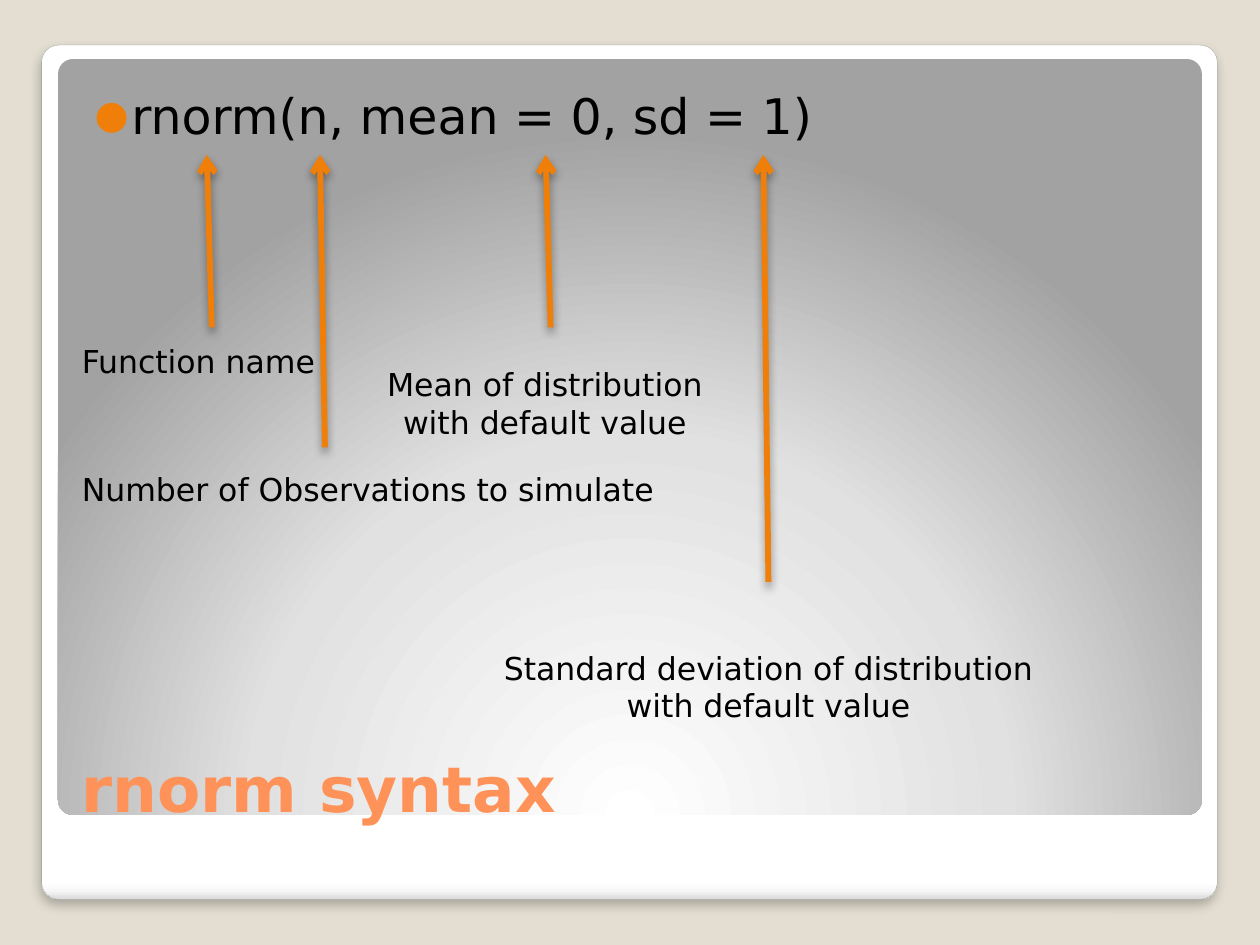
import pptx
import pptx.dml.color
import pptx.enum.shapes
import pptx.enum.text
import pptx.oxml
import pptx.oxml.ns
import pptx.util
from lxml import etree

Cm = pptx.util.Cm
Pt = pptx.util.Pt
ALIGN = pptx.enum.text.PP_ALIGN
ANCHOR = pptx.enum.text.MSO_ANCHOR
FONT = "DejaVu Sans"
ORANGE = "F07F09"
BLACK = "000000"


def rgb(color):
    return pptx.dml.color.RGBColor.from_string(color)


def add_xml(parent, xml):
    ns = pptx.oxml.ns.nsdecls("a")
    root = etree.fromstring(f"<r {ns}>{xml}</r>")
    for child in root:
        parent.append(pptx.oxml.parse_xml(etree.tostring(child)))


def add_shadow(sp, alpha, blur, dist):
    add_xml(
        sp._element.spPr,
        f'<a:effectLst><a:outerShdw blurRad="{Pt(blur)}" dist="{Pt(dist)}" '
        f'dir="5400000" algn="t" rotWithShape="0"><a:srgbClr val="{BLACK}">'
        f'<a:alpha val="{alpha * 1000}"/></a:srgbClr></a:outerShdw></a:effectLst>',
    )


def add_panel(s, box, stops, direction):
    kind = pptx.enum.shapes.MSO_SHAPE.ROUNDED_RECTANGLE
    sp = s.shapes.add_shape(kind, *map(Cm, box))
    sp.adjustments[0] = 0.02
    gs = "".join(
        f'<a:gs pos="{pos * 1000}"><a:srgbClr val="{color}"/></a:gs>'
        for pos, color in stops
    )
    add_xml(
        sp._element.spPr,
        f'<a:gradFill rotWithShape="1"><a:gsLst>{gs}</a:gsLst>{direction}</a:gradFill>',
    )
    sp.line.fill.background()
    return sp


def add_text(s, box, lines, size, color=BLACK, bold=False, align=ALIGN.LEFT,
             wrap=False, anchor=ANCHOR.TOP):
    sp = s.shapes.add_textbox(*map(Cm, box))
    tf = sp.text_frame
    tf.word_wrap = wrap
    tf.vertical_anchor = anchor
    tf.text = lines
    for p in tf.paragraphs:
        p.alignment = align
        for r in p.runs:
            r.font.name = FONT
            r.font.size = Pt(size)
            r.font.bold = bold
            r.font.color.rgb = rgb(color)
    return tf


def add_bullet(p):
    p.space_before = Pt(2.5)
    pPr = p._p.get_or_add_pPr()
    pPr.set("marL", str(Cm(0.74)))
    pPr.set("indent", str(-Cm(0.74)))
    add_xml(
        pPr,
        f'<a:buClr><a:srgbClr val="{ORANGE}"/></a:buClr><a:buSzPct val="80000"/>'
        f'<a:buFont typeface="{FONT}"/><a:buChar char="●"/>',
    )


def add_arrow(s, x, bottom, top=3.12, lean=0.1):
    kind = pptx.enum.shapes.MSO_CONNECTOR.STRAIGHT
    sp = s.shapes.add_connector(kind, Cm(x), Cm(bottom), Cm(x - lean), Cm(top))
    sp.line.color.rgb = rgb(ORANGE)
    sp.line.width = Pt(3.35)
    add_xml(sp.line._get_or_add_ln(), '<a:tailEnd type="arrow"/>')
    add_shadow(sp, 40, 5.2, 3)


def main():
    prs = pptx.Presentation()
    prs.slide_width, prs.slide_height = Cm(25.4), Cm(19.05)
    s = prs.slides.add_slide(prs.slide_layouts[6])
    s.background.fill.solid()
    s.background.fill.fore_color.rgb = rgb("E3DED1")

    frame = add_panel(
        s, (0.84, 0.91, 23.7, 17.22),
        [(0, "FFFFFF"), (98, "FFFFFF"), (99, "F7F7F7"), (100, "DADADA")],
        '<a:lin ang="5400000" scaled="0"/>',
    )
    frame.line.color.rgb = rgb("A4A4A4")
    frame.line.width = Pt(0.16)
    add_shadow(frame, 25, 6, 4)
    inner = add_panel(
        s, (1.17, 1.19, 23.06, 15.24),
        [(0, "FFFFFF"), (55, "E1E1E1"), (100, "A2A2A2")],
        '<a:path path="circle">'
        '<a:fillToRect l="50000" t="175000" r="50000" b="-75000"/></a:path>',
    )
    inner.shadow.inherit = False

    add_text(s, (1.4, 13.84, 22.73, 2.92), "rnorm syntax", 36, "FF9258",
             bold=True, wrap=True, anchor=ANCHOR.BOTTOM)
    tf = add_text(s, (1.4, 1.47, 22.73, 11.63), "rnorm(n, mean = 0, sd = 1)",
                  28, wrap=True)
    tf.margin_left, tf.margin_top = Cm(0.51), Cm(0.25)
    add_bullet(tf.paragraphs[0])

    for x, bottom in [(4.27, 6.6), (6.55, 9.02), (11.1, 6.6), (15.49, 11.73)]:
        add_arrow(s, x, bottom)

    default = "\nwith default value"
    for box, label, align in [
        ((1.4, 6.78, 5.28, 1.02), "Function name", ALIGN.LEFT),
        ((1.4, 9.35, 12.17, 1.02), "Number of Observations to simulate", ALIGN.LEFT),
        ((7.52, 7.24, 6.93, 1.8), "Mean of distribution" + default, ALIGN.CENTER),
        ((9.83, 12.95, 11.33, 1.8), "Standard deviation of distribution" + default,
         ALIGN.CENTER),
    ]:
        add_text(s, box, label, 18, align=align)

    prs.save("out.pptx")


if __name__ == "__main__":
    main()
